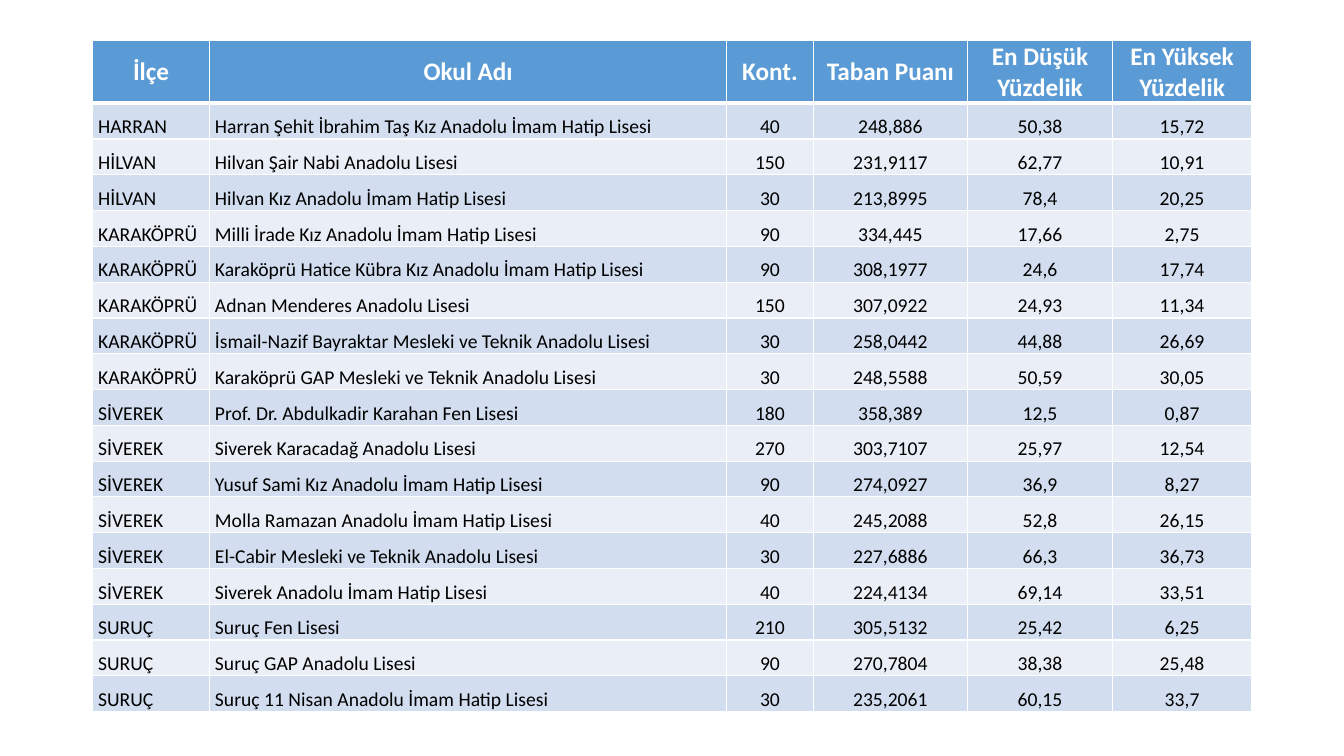
import lxml.etree
import pptx
import pptx.dml.color
import pptx.enum.text
import pptx.oxml.ns
import pptx.util

Pt = pptx.util.Pt
RGBColor = pptx.dml.color.RGBColor
ALIGN = pptx.enum.text.PP_ALIGN
ANCHOR = pptx.enum.text.MSO_ANCHOR
qn = pptx.oxml.ns.qn

FONT = "Calibri"
WHITE = RGBColor(0xFF, 0xFF, 0xFF)
BLACK = RGBColor(0x00, 0x00, 0x00)
HEADER_BLUE = RGBColor(0x5B, 0x9B, 0xD5)
BAND_DARK = RGBColor(0xD2, 0xDE, 0xEF)
BAND_LIGHT = RGBColor(0xEA, 0xEF, 0xF7)

COLUMN_WIDTHS = (83.5, 369.4, 61.9, 110.2, 103.6, 99.4)
HEADER_HEIGHT = 42.5
HEADINGS = ("İlçe", "Okul Adı", "Kont.", "Taban Puanı",
            "En Düşük Yüzdelik", "En Yüksek Yüzdelik")
SCHOOLS = (
    ("HARRAN", "Harran Şehit İbrahim Taş Kız Anadolu İmam Hatip Lisesi", "40", "248,886", "50,38", "15,72"),
    ("HİLVAN", "Hilvan Şair Nabi Anadolu Lisesi", "150", "231,9117", "62,77", "10,91"),
    ("HİLVAN", "Hilvan Kız Anadolu İmam Hatip Lisesi", "30", "213,8995", "78,4", "20,25"),
    ("KARAKÖPRÜ", "Milli İrade Kız Anadolu İmam Hatip Lisesi", "90", "334,445", "17,66", "2,75"),
    ("KARAKÖPRÜ", "Karaköprü Hatice Kübra Kız Anadolu İmam Hatip Lisesi", "90", "308,1977", "24,6", "17,74"),
    ("KARAKÖPRÜ", "Adnan Menderes Anadolu Lisesi", "150", "307,0922", "24,93", "11,34"),
    ("KARAKÖPRÜ", "İsmail-Nazif Bayraktar Mesleki ve Teknik Anadolu Lisesi", "30", "258,0442", "44,88", "26,69"),
    ("KARAKÖPRÜ", "Karaköprü GAP Mesleki ve Teknik Anadolu Lisesi", "30", "248,5588", "50,59", "30,05"),
    ("SİVEREK", "Prof. Dr. Abdulkadir Karahan Fen Lisesi", "180", "358,389", "12,5", "0,87"),
    ("SİVEREK", "Siverek Karacadağ Anadolu Lisesi", "270", "303,7107", "25,97", "12,54"),
    ("SİVEREK", "Yusuf Sami Kız Anadolu İmam Hatip Lisesi", "90", "274,0927", "36,9", "8,27"),
    ("SİVEREK", "Molla Ramazan Anadolu İmam Hatip Lisesi", "40", "245,2088", "52,8", "26,15"),
    ("SİVEREK", "El-Cabir Mesleki ve Teknik Anadolu Lisesi", "30", "227,6886", "66,3", "36,73"),
    ("SİVEREK", "Siverek Anadolu İmam Hatip Lisesi", "40", "224,4134", "69,14", "33,51"),
    ("SURUÇ", "Suruç Fen Lisesi", "210", "305,5132", "25,42", "6,25"),
    ("SURUÇ", "Suruç GAP Anadolu Lisesi", "90", "270,7804", "38,38", "25,48"),
    ("SURUÇ", "Suruç 11 Nisan Anadolu İmam Hatip Lisesi", "30", "235,2061", "60,15", "33,7"),
)


def set_borders(cell, top=1, bottom=1):
    properties = cell._tc.get_or_add_tcPr()
    for side, width in (("L", 1), ("R", 1), ("T", top), ("B", bottom)):
        line = lxml.etree.SubElement(properties, qn(f"a:ln{side}"), w=str(Pt(width)))
        fill = lxml.etree.SubElement(line, qn("a:solidFill"))
        lxml.etree.SubElement(fill, qn("a:srgbClr"), val=str(WHITE))


def write_cell(cell, text, size, color, background, bold=False,
               align=ALIGN.CENTER, anchor=ANCHOR.BOTTOM, indent=0.72):
    cell.fill.solid()
    cell.fill.fore_color.rgb = background
    cell.margin_left, cell.margin_right = Pt(indent), Pt(0.72)
    cell.margin_top, cell.margin_bottom = Pt(0.72), Pt(0)
    cell.vertical_anchor = anchor
    paragraph = cell.text_frame.paragraphs[0]
    paragraph.text = text
    paragraph.alignment = align
    paragraph.font.name = FONT
    paragraph.font.size = Pt(size)
    paragraph.font.bold = bold
    paragraph.font.color.rgb = color


def add_school_table(slide, left, top, width, height):
    frame = slide.shapes.add_table(len(SCHOOLS) + 1, len(HEADINGS),
                                   Pt(left), Pt(top), Pt(width), Pt(height))
    table = frame.table
    for column, column_width in zip(table.columns, COLUMN_WIDTHS):
        column.width = Pt(column_width * width / sum(COLUMN_WIDTHS))
    for row in table.rows:
        row.height = Pt((height - HEADER_HEIGHT) / len(SCHOOLS))
    table.rows[0].height = Pt(HEADER_HEIGHT)

    # Header row
    for col, heading in enumerate(HEADINGS):
        cell = table.cell(0, col)
        set_borders(cell, bottom=3)
        write_cell(cell, heading, 18, WHITE, HEADER_BLUE, bold=True, anchor=ANCHOR.MIDDLE)

    # School rows: names on the left, figures centred
    for row, school in enumerate(SCHOOLS, start=1):
        band = BAND_DARK if row % 2 else BAND_LIGHT
        for col, value in enumerate(school):
            cell = table.cell(row, col)
            set_borders(cell, top=3 if row == 1 else 1)
            if col < 2:
                write_cell(cell, value, 14, BLACK, band, align=ALIGN.LEFT, indent=3.9)
            else:
                write_cell(cell, value, 14, BLACK, band)


def main():
    presentation = pptx.Presentation()
    presentation.slide_width, presentation.slide_height = Pt(960), Pt(540)
    slide = presentation.slides.add_slide(presentation.slide_layouts[6])
    add_school_table(slide, 66.2, 29, 828, 477.4)
    presentation.save("out.pptx")


if __name__ == "__main__":
    main()
